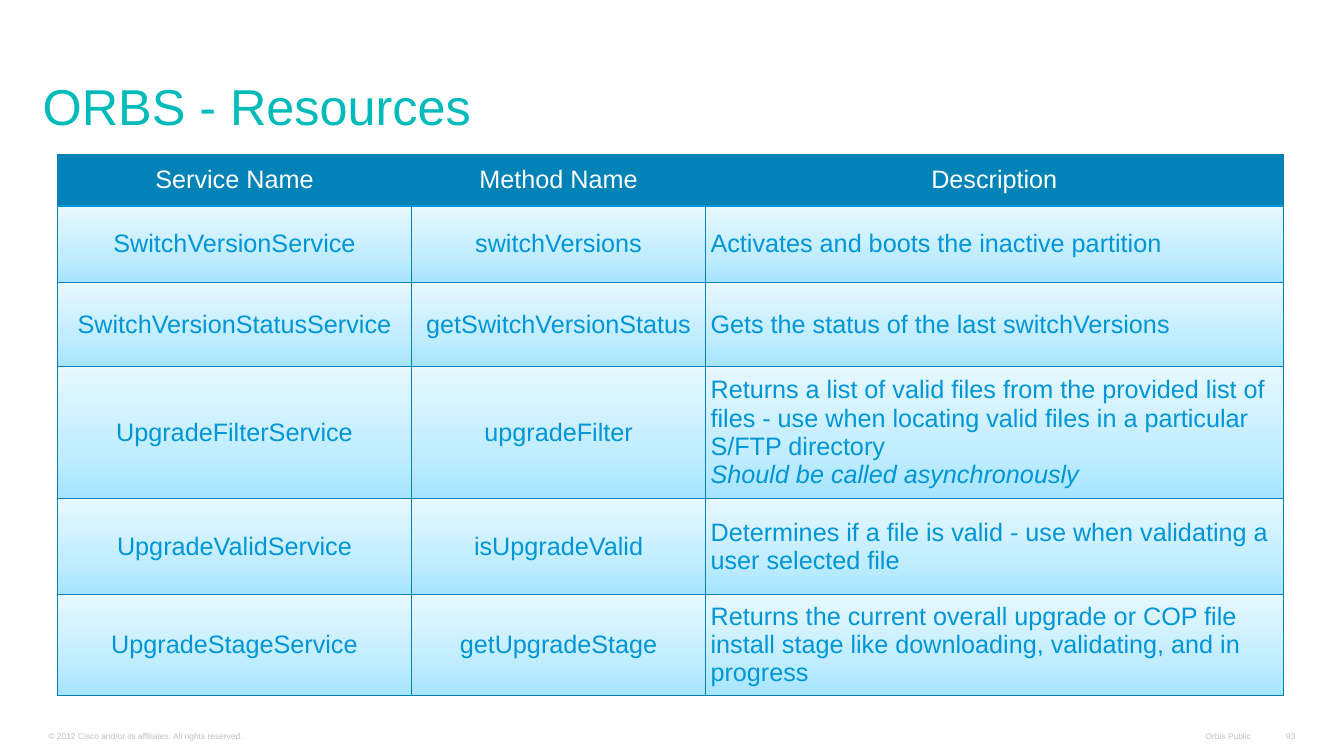
from pptx import Presentation
from pptx.dml.color import RGBColor
from pptx.enum.text import MSO_ANCHOR as ANCHOR, MSO_AUTO_SIZE as AUTO, PP_ALIGN as ALIGN
from pptx.oxml import parse_xml
from pptx.oxml.ns import nsdecls
from pptx.util import Pt

TEAL = RGBColor(0x01, 0xBB, 0xBB)
BLUE = RGBColor(0x00, 0x96, 0xD6)
HEADER = RGBColor(0x01, 0x83, 0xB7)
BORDER = RGBColor(0x00, 0x80, 0xB3)
WHITE = RGBColor(0xFF, 0xFF, 0xFF)
GREY = RGBColor(0xC0, 0xC0, 0xC0)
CELL_STOPS = [
    (0, RGBColor(0xE7, 0xF8, 0xFE)),
    (65, RGBColor(0xC1, 0xED, 0xFF)),
    (100, RGBColor(0xA6, 0xE5, 0xFF)),
]
FONT = "Arial"

TITLE = "ORBS - Resources"
ROWS = [
    ("Service Name", "Method Name", "Description"),
    ("SwitchVersionService", "switchVersions", "Activates and boots the inactive partition"),
    ("SwitchVersionStatusService", "getSwitchVersionStatus",
     "Gets the status of the last switchVersions"),
    ("UpgradeFilterService", "upgradeFilter",
     "Returns a list of valid files from the provided list of files - use when "
     "locating valid files in a particular S/FTP directory\nShould be called asynchronously"),
    ("UpgradeValidService", "isUpgradeValid",
     "Determines if a file is valid - use when validating a user selected file"),
    ("UpgradeStageService", "getUpgradeStage",
     "Returns the current overall upgrade or COP file install stage like "
     "downloading, validating, and in progress"),
]
ITALIC_LINE = "Should be called asynchronously"
COL_WIDTHS = [253, 210, 412.5]
ROW_HEIGHTS = [37, 54.5, 60, 94.5, 68.5, 72]
TABLE_LEFT, TABLE_TOP = 41, 110.2

FOOTER_TOP, FOOTER_HEIGHT = 518.4, 13.7
FOOTERS = [
    ("© 2012 Cisco and/or its affiliates. All rights reserved.", 28.1, 359.3, ALIGN.LEFT, True),
    ("Orbis Public", 853.2, 46.8, ALIGN.RIGHT, False),
    ("93", 911.5, 20.2, ALIGN.RIGHT, False),
]


def style(p, size, color, align):
    p.alignment = align
    for r in p.runs:
        r.font.name = FONT
        r.font.size = Pt(size)
        r.font.color.rgb = color


def add_text(slide, text, box, size, color, align=ALIGN.LEFT, wrap=True, inset=3.6):
    s = slide.shapes.add_textbox(*map(Pt, box))
    tf = s.text_frame
    tf.word_wrap = wrap
    tf.auto_size = AUTO.NONE
    tf.vertical_anchor = ANCHOR.BOTTOM
    tf.margin_left = tf.margin_right = Pt(6.5)
    tf.margin_top = tf.margin_bottom = Pt(inset)
    tf.text = text
    style(tf.paragraphs[0], size, color, align)
    return tf.paragraphs[0]


def set_border(cell, side, color, width):
    fill = f'<a:solidFill><a:srgbClr val="{color}"/></a:solidFill>' if color else "<a:noFill/>"
    cell._tc.get_or_add_tcPr().append(
        parse_xml(f'<a:ln{side} {nsdecls("a")} w="{Pt(width)}">{fill}</a:ln{side}>'))


def set_gradient(cell):
    stops = "".join(f'<a:gs pos="{pos * 1000}"><a:srgbClr val="{color}"/></a:gs>'
                    for pos, color in CELL_STOPS)
    cell._tc.get_or_add_tcPr().append(parse_xml(
        f'<a:gradFill {nsdecls("a")} rotWithShape="1"><a:gsLst>{stops}</a:gsLst>'
        '<a:lin ang="5400000" scaled="0"/></a:gradFill>'))


def fill_cell(cell, text, row, col):
    is_header, is_last = row == 0, col == len(COL_WIDTHS) - 1
    cell.vertical_anchor = ANCHOR.MIDDLE
    cell.margin_left = cell.margin_right = Pt(3.6 if is_last else 0)
    cell.margin_top = cell.margin_bottom = Pt(2.9 if is_last else 0)
    cell.text = text
    align = ALIGN.LEFT if is_last and not is_header else ALIGN.CENTER
    for p in cell.text_frame.paragraphs:
        style(p, 18, WHITE if is_header else BLUE, align)
        for r in p.runs:
            r.font.bold = False
            r.font.italic = r.text == ITALIC_LINE

    set_border(cell, "L", None if is_header and col else BORDER, 0.75)
    set_border(cell, "R", None if is_header and not is_last else BORDER, 0.75)
    set_border(cell, "T", *((BLUE, 2) if row == 1 else (BORDER, 0.75)))
    set_border(cell, "B", *((BLUE, 2) if is_header else (BORDER, 0.75)))
    if is_header:
        cell.fill.solid()
        cell.fill.fore_color.rgb = HEADER
    else:
        set_gradient(cell)


def add_services_table(slide):
    box = (TABLE_LEFT, TABLE_TOP, sum(COL_WIDTHS), sum(ROW_HEIGHTS))
    table = slide.shapes.add_table(len(ROWS), len(COL_WIDTHS), *map(Pt, box)).table
    table.horz_banding = False
    for column, width in zip(table.columns, COL_WIDTHS):
        column.width = Pt(width)
    for i, (texts, height) in enumerate(zip(ROWS, ROW_HEIGHTS)):
        table.rows[i].height = Pt(height)
        for j, text in enumerate(texts):
            fill_cell(table.cell(i, j), text, i, j)


def main():
    prs = Presentation()
    prs.slide_width, prs.slide_height = Pt(960), Pt(540)
    slide = prs.slides.add_slide(prs.slide_layouts[6])
    for text, left, width, align, wrap in FOOTERS:
        box = (left, FOOTER_TOP, width, FOOTER_HEIGHT)
        add_text(slide, text, box, 6, GREY, align, wrap, inset=2.9)
    title = add_text(slide, TITLE, (24, 33.8, 901.4, 66.2), 36, TEAL)
    title.line_spacing = 0.8
    add_services_table(slide)
    prs.save("out.pptx")


if __name__ == "__main__":
    main()
